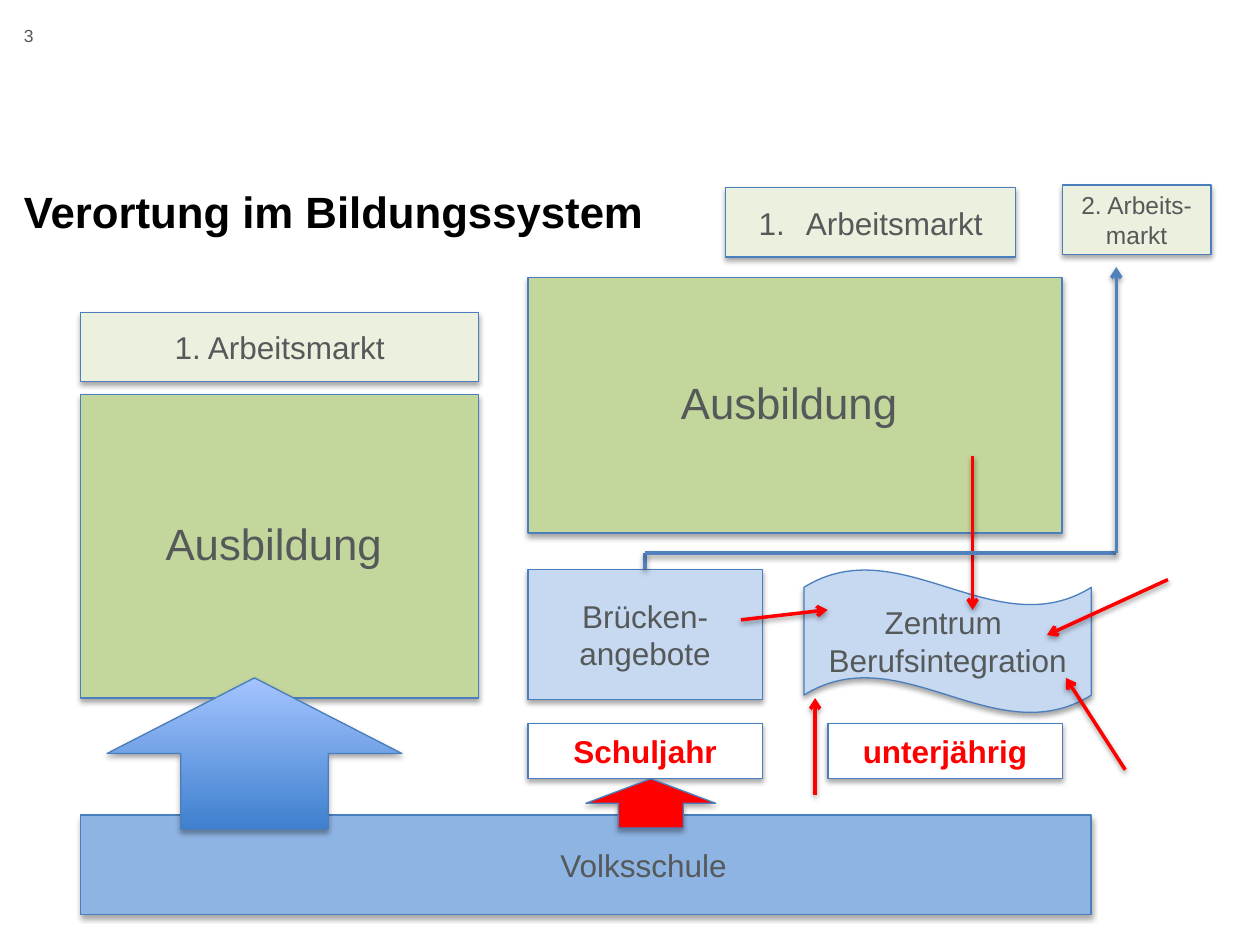
from dataclasses import dataclass

from lxml.etree import SubElement
from pptx import Presentation
from pptx.dml.color import RGBColor
from pptx.enum.shapes import MSO_CONNECTOR, MSO_SHAPE
from pptx.enum.text import MSO_ANCHOR, MSO_AUTO_SIZE, PP_ALIGN
from pptx.oxml.ns import qn
from pptx.util import Pt


@dataclass(frozen=True)
class Theme:
    font: str = "Arial"
    text: str = "555959"
    title: str = "000000"
    outline: str = "4B7EBC"
    route: str = "4F81BD"
    red: str = "FF0000"
    school: str = "8EB4E3"
    bridge: str = "C6D9F1"
    training: str = "C3D69B"
    market: str = "EBF1DE"
    white: str = "FFFFFF"
    arrow_low: str = "3F80CE"
    arrow_high: str = "A4C4FF"
    large: int = 25
    medium: int = 18
    small: int = 14
    tiny: int = 10


T = Theme()
RECT, WAVE, UP = MSO_SHAPE.RECTANGLE, MSO_SHAPE.WAVE, MSO_SHAPE.UP_ARROW

TITLE = "Verortung im Bildungssystem"
PAGE = "3"

# Columns and rows shared by several boxes: (start, extent)
LEFT, BRIDGE, WIDE = (46.1, 227.5), (301.7, 133.9), (301.7, 305.3)
LABEL_ROW, MARKET_H = (413.3, 31.7), 39.6

TRAINING_LEFT = ("Ausbildung ", LEFT, (225.4, 173.5))
# text, geometry, (left, width), (top, height), fill, text size
BOXES = [
    ("Volksschule", RECT, (46.1, 577.4), (465.8, 56.9), T.school, T.medium),
    ("Brücken-\nangebote", RECT, BRIDGE, (325.4, 74.2), T.bridge, T.medium),
    ("Zentrum \nBerufsintegration", WAVE, (459.4, 164.2), (325.4, 82.1), T.bridge, T.medium),
    ("Ausbildung ", RECT, WIDE, (158.4, 146.2), T.training, T.large),
    ("1. Arbeitsmarkt", RECT, LEFT, (178.6, MARKET_H), T.market, T.medium),
    ("Arbeitsmarkt", RECT, (414.7, 165.6), (107.3, MARKET_H), T.market, T.medium),
    ("Schuljahr", RECT, BRIDGE, LABEL_ROW, T.white, T.medium),
    ("unterjährig", RECT, (473.1, 133.9), LABEL_ROW, T.white, T.medium),
    ("2. Arbeits-markt", RECT, (607, 85), (105.8, MARKET_H), T.market, T.small),
]
RED_LABELS = ("Schuljahr", "unterjährig")
NUMBERED = "Arbeitsmarkt"
SCHOOL_INSET = 73  # moves the label right of the box centre

RED_ARROW = ((334.8, 74.2), (445, 28.1))
BLUE_ARROW = ((61.2, 168.5), (387.4, 86.4))

ENTRIES = [
    ((465.8, 454.3), (465.8, 398.9)),
    ((643, 439.9), (609.1, 387.4)),
    ((667.4, 331.2), (598.3, 362.9)),
    ((555.8, 260.6), (555.8, 348.5)),
    ((423.4, 354.2), (473, 348.5)),
]
ROUTE = [(368.65, 325.4), (368.65, 316.1), (637.9, 316.1), (637.9, 152.6)]


def rgb(value):
    return RGBColor.from_string(value)


def add_shadow(effects, distance, opacity):
    shadow = SubElement(effects, qn("a:outerShdw"), blurRad=str(Pt(3.1)),
                        dist=str(Pt(distance)), dir="5400000", rotWithShape="0")
    color = SubElement(shadow, qn("a:srgbClr"), val="000000")
    SubElement(color, qn("a:alpha"), val=str(opacity * 1000))


def place(sp, across, down):
    sp.left, sp.width = map(Pt, across)
    sp.top, sp.height = map(Pt, down)


def style_shape(sp, fill):
    sp.fill.solid()
    sp.fill.fore_color.rgb = rgb(fill)
    sp.line.color.rgb = rgb(T.outline)
    sp.line.width = Pt(0.75)
    sp.shadow.inherit = False
    add_shadow(sp._element.spPr.find(qn("a:effectLst")), 1.8, 35)


def write(sp, text, size, color=T.text, bold=False, align=PP_ALIGN.CENTER,
          anchor=MSO_ANCHOR.MIDDLE, inset=None):
    tf = sp.text_frame
    tf.text = text
    tf.word_wrap = True
    tf.auto_size = MSO_AUTO_SIZE.NONE
    tf.vertical_anchor = anchor
    if inset is not None:
        tf.margin_left = tf.margin_right = tf.margin_top = tf.margin_bottom = Pt(inset)
    for p in tf.paragraphs:
        p.alignment = align
        for r in p.runs:
            r.font.name, r.font.size, r.font.bold = T.font, Pt(size), bold
            r.font.color.rgb = rgb(color)
    return tf


def set_bullet(p, tag, indent, **attributes):
    pPr = p._p.get_or_add_pPr()
    pPr.set("marL", str(Pt(indent)))
    pPr.set("indent", str(-Pt(indent)))
    SubElement(pPr, qn(tag), **attributes)


def space_training(p):
    p.line_spacing, p.space_before, p.space_after = 0.9, Pt(0), Pt(12.5)


def add_line(shapes, start, end, color, arrow=True):
    line = shapes.add_connector(MSO_CONNECTOR.STRAIGHT, *map(Pt, start + end))
    line.line.color.rgb = rgb(color)
    line.line.width = Pt(2)
    if arrow:
        SubElement(line.line._get_or_add_ln(), qn("a:tailEnd"), type="arrow")
    add_shadow(SubElement(line._element.spPr, qn("a:effectLst")), 1.6, 38)
    return line


def add_block_arrow(shapes, spot, fill):
    sp = shapes.add_shape(UP, 0, 0, 0, 0)
    place(sp, *spot)
    style_shape(sp, fill)
    return sp


def main():
    prs = Presentation()
    prs.slide_width, prs.slide_height = Pt(720), Pt(540)
    slide = prs.slides.add_slide(prs.slide_layouts[1])
    shapes = slide.shapes

    title = shapes.title
    place(title, (13.7, 691.9), (76.3, 58.3))
    tf = write(title, TITLE, T.large, T.title, True, PP_ALIGN.LEFT, MSO_ANCHOR.BOTTOM, 0)
    tf.paragraphs[0].line_spacing = 0.7

    text, across, down = TRAINING_LEFT
    body = slide.placeholders[1]
    place(body, across, down)
    style_shape(body, T.training)
    p = write(body, text, T.large, inset=0).paragraphs[0]
    space_training(p)
    set_bullet(p, "a:buNone", 0)

    page = shapes.add_textbox(0, 0, 0, 0)
    place(page, (13.7, 31.7), (14.4, 28.8))
    write(page, PAGE, T.tiny, align=PP_ALIGN.LEFT, anchor=MSO_ANCHOR.TOP, inset=0)

    boxes = {}
    for text, geometry, across, down, fill, size in BOXES:
        sp = shapes.add_shape(geometry, 0, 0, 0, 0)
        place(sp, across, down)
        style_shape(sp, fill)
        red = text in RED_LABELS
        p = write(sp, text, size, T.red if red else T.text, red).paragraphs[0]
        if size == T.large:
            space_training(p)
        if text == NUMBERED:
            set_bullet(p, "a:buAutoNum", 27, type="arabicPeriod")
        boxes[text] = sp
    boxes["Volksschule"].text_frame.margin_left = Pt(SCHOOL_INSET)

    add_block_arrow(shapes, RED_ARROW, T.red)
    big = add_block_arrow(shapes, BLUE_ARROW, T.arrow_low)
    big.fill.gradient()
    big.fill.gradient_angle = 90
    for stop, color, position in zip(big.fill.gradient_stops, (T.arrow_low, T.arrow_high), (0, 1)):
        stop.color.rgb = rgb(color)
        stop.position = position

    for start, end in ENTRIES:
        add_line(shapes, start, end, T.red)
    route = [add_line(shapes, start, end, T.route, end == ROUTE[-1])
             for start, end in zip(ROUTE, ROUTE[1:])]
    route[0].begin_connect(boxes["Brücken-\nangebote"], 0)

    prs.save("out.pptx")


if __name__ == "__main__":
    main()
